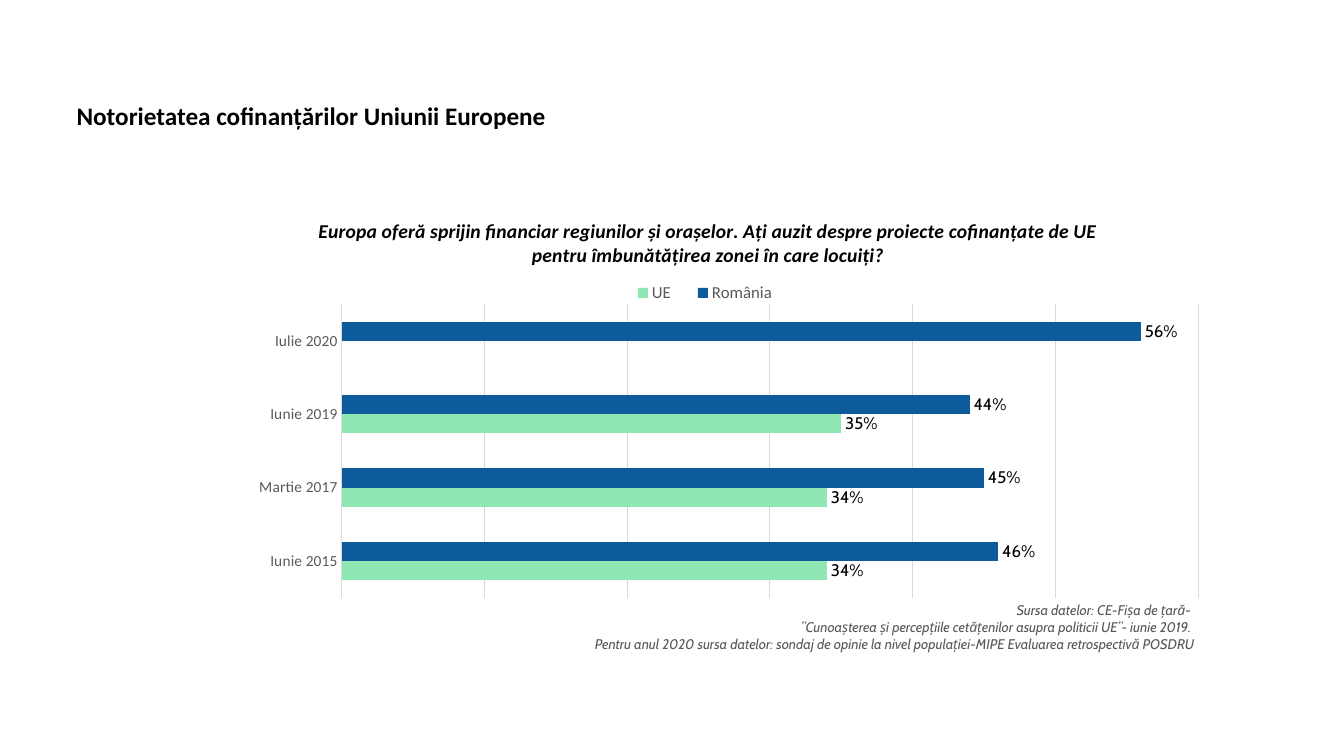
from lxml import etree
from pptx import Presentation
from pptx import util as u
from pptx.chart.data import CategoryChartData
from pptx.dml.color import RGBColor
from pptx.enum import chart as ch, text
from pptx.oxml import parse_xml
from pptx.oxml.ns import nsdecls, qn

COLORS = {"black": "000000", "gray": "595959", "grid": "D9D9D9",
          "România": "0D5B9B", "UE": "8FE8B3"}
PERIODS = ["Iulie 2020", "Iunie 2019", "Martie 2017", "Iunie 2015"]
AWARENESS = {"România": [0.56, 0.44, 0.45, 0.46],
             "UE": [None, 0.35, 0.34, 0.34]}
QUESTION = ("Europa oferă sprijin financiar regiunilor și orașelor. "
            "Ați auzit despre proiecte cofinanțate de UE "
            "pentru îmbunătățirea zonei în care locuiți?")
SOURCES = [
    "Sursa datelor: CE-Fișa de țară- ",
    "”Cunoașterea și percepțiile cetățenilor asupra politicii UE”- iunie 2019. ",
    "Pentru anul 2020 sursa datelor: sondaj de opinie la nivel populației-MIPE "
    "Evaluarea retrospectivă POSDRU",
]


def rgb(name):
    return RGBColor.from_string(COLORS[name])


def style_font(font, name, size, color, bold=False, italic=False):
    font.name = name
    font.size = u.Pt(size)
    font.color.rgb = rgb(color)
    font.bold = bold
    font.italic = italic


def style_line(line, color):
    line.color.rgb = rgb(color)
    line.width = u.Pt(0.75)


def set_box(sp, left, top, width, height):
    sp.left, sp.top = u.Inches(left), u.Inches(top)
    sp.width, sp.height = u.Inches(width), u.Inches(height)


def set_layout(element, x, y, w=None, h=None, inner=False):
    for old in element.findall(qn("c:layout")):
        element.remove(old)
    layout = parse_xml(f"<c:layout {nsdecls('c')}><c:manualLayout/></c:layout>")
    values = [("layoutTarget", "inner")] if inner else []
    values += [("xMode", "edge"), ("yMode", "edge"), ("x", x), ("y", y)]
    if w is not None:
        values += [("w", w), ("h", h)]
    for tag, value in values:
        etree.SubElement(layout[0], qn(f"c:{tag}")).set("val", str(value))
    before = [c for c in element
              if c.tag in (qn("c:tx"), qn("c:legendPos"), qn("c:legendEntry"))]
    element.insert(len(before), layout)


def add_title(s, title):
    sp = s.shapes.title
    set_box(sp, 0.76, 0.76, 12, 0.78)
    tf = sp.text_frame
    tf.margin_left = tf.margin_right = tf.margin_top = tf.margin_bottom = 0
    tf.vertical_anchor = text.MSO_ANCHOR.MIDDLE
    p = tf.paragraphs[0]
    p.alignment = text.PP_ALIGN.LEFT
    r = p.add_run()
    r.text = title
    style_font(r.font, "Calibri", 18, "black", bold=True)


def format_axes(chart):
    periods = chart.category_axis
    periods.reverse_order = True
    periods.major_tick_mark = ch.XL_TICK_MARK.NONE
    style_line(periods.format.line, "grid")
    style_font(periods.tick_labels.font, "Calibri", 11, "gray")
    shares = chart.value_axis
    shares.visible = False
    shares.minimum_scale, shares.maximum_scale = 0, 0.6
    shares.major_unit = 0.1
    shares.tick_labels.number_format = "0%"
    shares.tick_labels.number_format_is_linked = False
    style_line(shares.major_gridlines.format.line, "grid")


def format_bars(plot):
    plot.gap_width = 182
    plot.overlap = 0
    plot.vary_by_categories = False
    for series in plot.series:
        series.format.fill.solid()
        series.format.fill.fore_color.rgb = rgb(series.name)
        labels = series.data_labels
        labels.show_value = True
        labels.number_format = "0%"
        labels.number_format_is_linked = False
        labels.position = ch.XL_LABEL_POSITION.OUTSIDE_END
        style_font(labels.font, "Cabin", 12, "black")


def add_awareness_chart(s):
    data = CategoryChartData(number_format="0%")
    data.categories = PERIODS
    for name, values in AWARENESS.items():
        data.add_series(name, values)
    chart = s.shapes.add_chart(
        ch.XL_CHART_TYPE.BAR_CLUSTERED, u.Inches(1.78), u.Inches(1.94),
        u.Inches(10.32), u.Inches(4.49), data).chart
    style_font(chart.font, "Cabin", 10, "black")

    chart.has_title = True
    r = chart.chart_title.text_frame.paragraphs[0].add_run()
    r.text = QUESTION
    style_font(r.font, "Calibri", 14, "black", bold=True, italic=True)
    chart.chart_title.include_in_layout = False

    chart.has_legend = True
    chart.legend.position = ch.XL_LEGEND_POSITION.BOTTOM
    chart.legend.include_in_layout = False
    style_font(chart.legend.font, "Calibri", 12, "gray")

    format_axes(chart)
    format_bars(chart.plots[0])
    c = chart.element.find(qn("c:chart"))
    set_layout(c.find(qn("c:title")), 0.13, 0.04)
    set_layout(c.find(qn("c:legend")), 0.42, 0.18, 0.17, 0.07)
    set_layout(c.find(qn("c:plotArea")), 0.156, 0.24, 0.823, 0.649, inner=True)


def add_sources(s):
    sp = s.shapes.add_textbox(0, 0, 0, 0)
    set_box(sp, 3.2, 5.92, 8.74, 1.01)
    tf = sp.text_frame
    tf.word_wrap = True
    for i, source in enumerate(SOURCES):
        p = tf.add_paragraph() if i else tf.paragraphs[0]
        p.alignment = text.PP_ALIGN.RIGHT
        r = p.add_run()
        r.text = source
        style_font(r.font, "Cabin", 10, "gray", italic=True)


def main():
    prs = Presentation()
    prs.slide_width, prs.slide_height = u.Inches(13.33), u.Inches(7.5)
    s = prs.slides.add_slide(prs.slide_layouts[5])
    add_title(s, "Notorietatea cofinanțărilor Uniunii Europene")
    add_awareness_chart(s)
    add_sources(s)
    prs.save("out.pptx")


if __name__ == "__main__":
    main()
